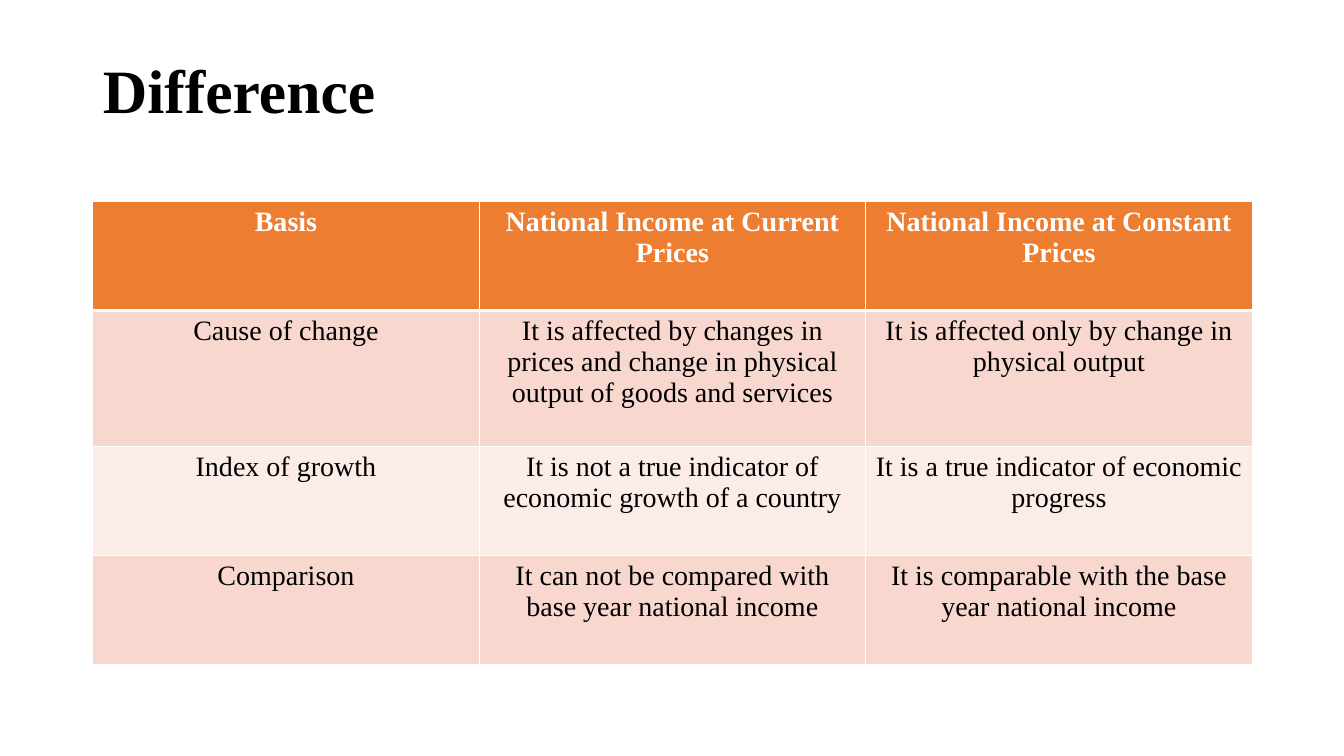
"""Build the slide comparing national income at current and constant prices."""
from lxml import etree
from pptx import Presentation
from pptx.dml.color import RGBColor
from pptx.enum import text
from pptx.oxml import ns
from pptx.util import Inches, Pt

HEADING = "Difference"
COMPARISON = [
    ("Basis", "National Income at Current Prices", "National Income at Constant Prices"),
    ("Cause of change",
     "It is affected by changes in prices and change in physical output of goods and services",
     "It is affected only by change in physical output"),
    ("Index of growth",
     "It is not a true indicator of economic growth of a country",
     "It is a true indicator of economic progress"),
    ("Comparison",
     "It can not be compared with base year national income",
     "It is comparable with the base year national income"),
]
ROW_HEIGHTS = (1.08, 1.35, 1.08, 1.08)
ROW_FILLS = ("ED7D31", "F8D7CE", "FCECE8", "F8D7CE")
LEFT, WIDTH, TABLE_TOP = 0.92, 11.5, 2
FONT, BLACK, WHITE = "Times New Roman", "000000", "FFFFFF"


def rgb(value):
    return RGBColor.from_string(value)


def style(paragraph, size, color, bold):
    for run in paragraph.runs:
        run.font.name = FONT
        run.font.size = Pt(size)
        run.font.bold = bold
        run.font.color.rgb = rgb(color)


def add_borders(cell, row):
    widths = {"lnL": 1, "lnR": 1, "lnT": 3 if row == 1 else 1, "lnB": 3 if row == 0 else 1}
    properties = cell._tc.get_or_add_tcPr()
    for side, width in widths.items():
        border = etree.SubElement(properties, ns.qn(f"a:{side}"), w=str(Pt(width)))
        solid = etree.SubElement(border, ns.qn("a:solidFill"))
        etree.SubElement(solid, ns.qn("a:srgbClr"), val=WHITE)


def add_heading(slide):
    title = slide.shapes.title
    title.left, title.top = Inches(LEFT), Inches(0.4)
    title.width, title.height = Inches(WIDTH), Inches(1.06)
    frame = title.text_frame
    frame.text = HEADING
    frame.word_wrap = True
    frame.vertical_anchor = text.MSO_ANCHOR.MIDDLE
    paragraph = frame.paragraphs[0]
    paragraph.alignment = text.PP_ALIGN.LEFT
    paragraph.line_spacing = 0.9
    style(paragraph, 44, BLACK, True)


def add_comparison(slide):
    columns = len(COMPARISON[0])
    table = slide.shapes.add_table(
        len(COMPARISON), columns, Inches(LEFT), Inches(TABLE_TOP),
        Inches(WIDTH), Inches(sum(ROW_HEIGHTS))).table
    for column in table.columns:
        column.width = Inches(WIDTH / columns)
    for row, (labels, height, fill) in enumerate(zip(COMPARISON, ROW_HEIGHTS, ROW_FILLS)):
        table.rows[row].height = Inches(height)
        for column, label in enumerate(labels):
            cell = table.cell(row, column)
            add_borders(cell, row)
            cell.fill.solid()
            cell.fill.fore_color.rgb = rgb(fill)
            cell.text_frame.text = label
            paragraph = cell.text_frame.paragraphs[0]
            paragraph.alignment = text.PP_ALIGN.CENTER
            style(paragraph, 20, WHITE if row == 0 else BLACK, row == 0)


def main():
    deck = Presentation()
    deck.slide_width, deck.slide_height = Inches(13.33), Inches(7.5)
    slide = deck.slides.add_slide(deck.slide_layouts[5])
    add_heading(slide)
    add_comparison(slide)
    deck.save("out.pptx")


if __name__ == "__main__":
    main()
